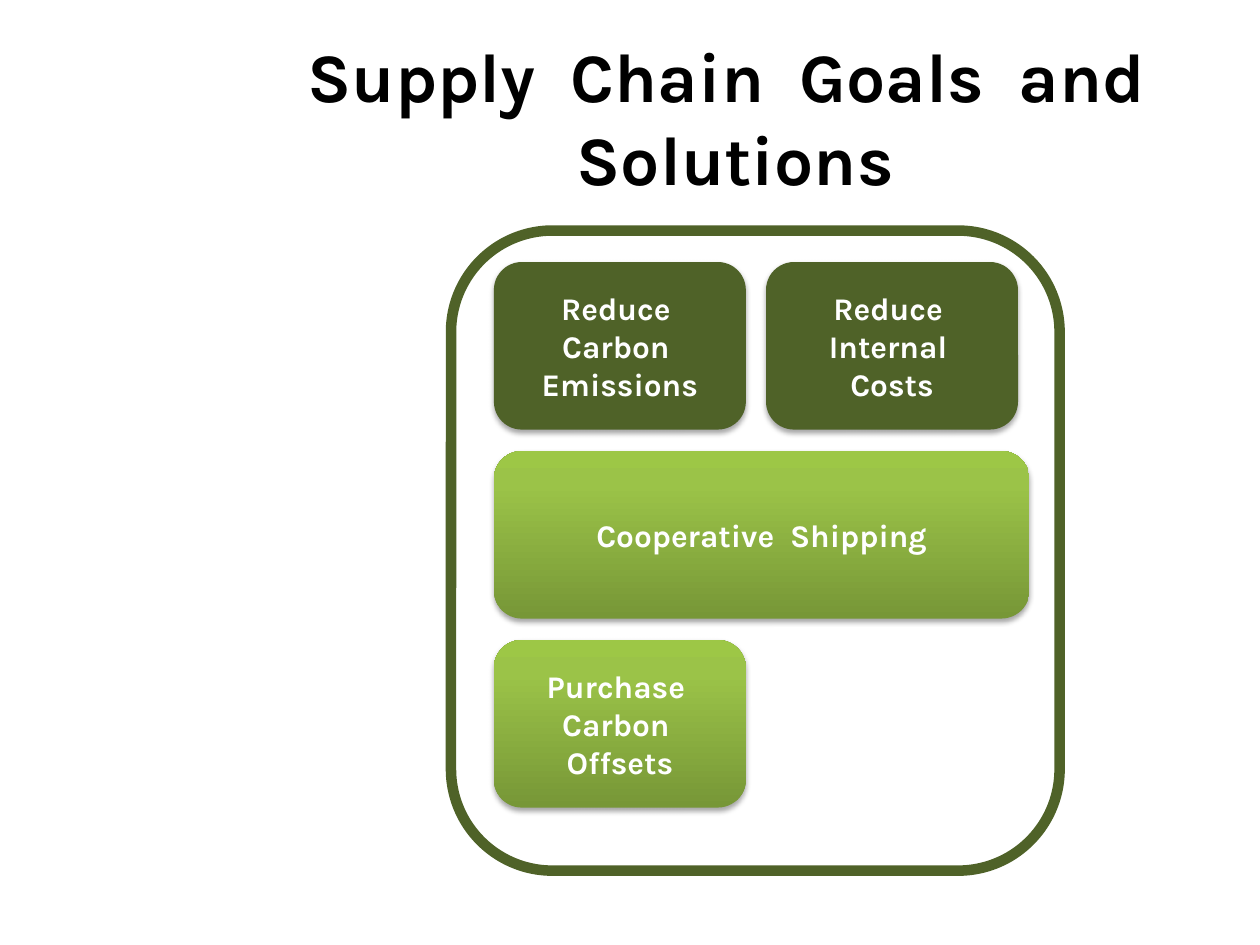
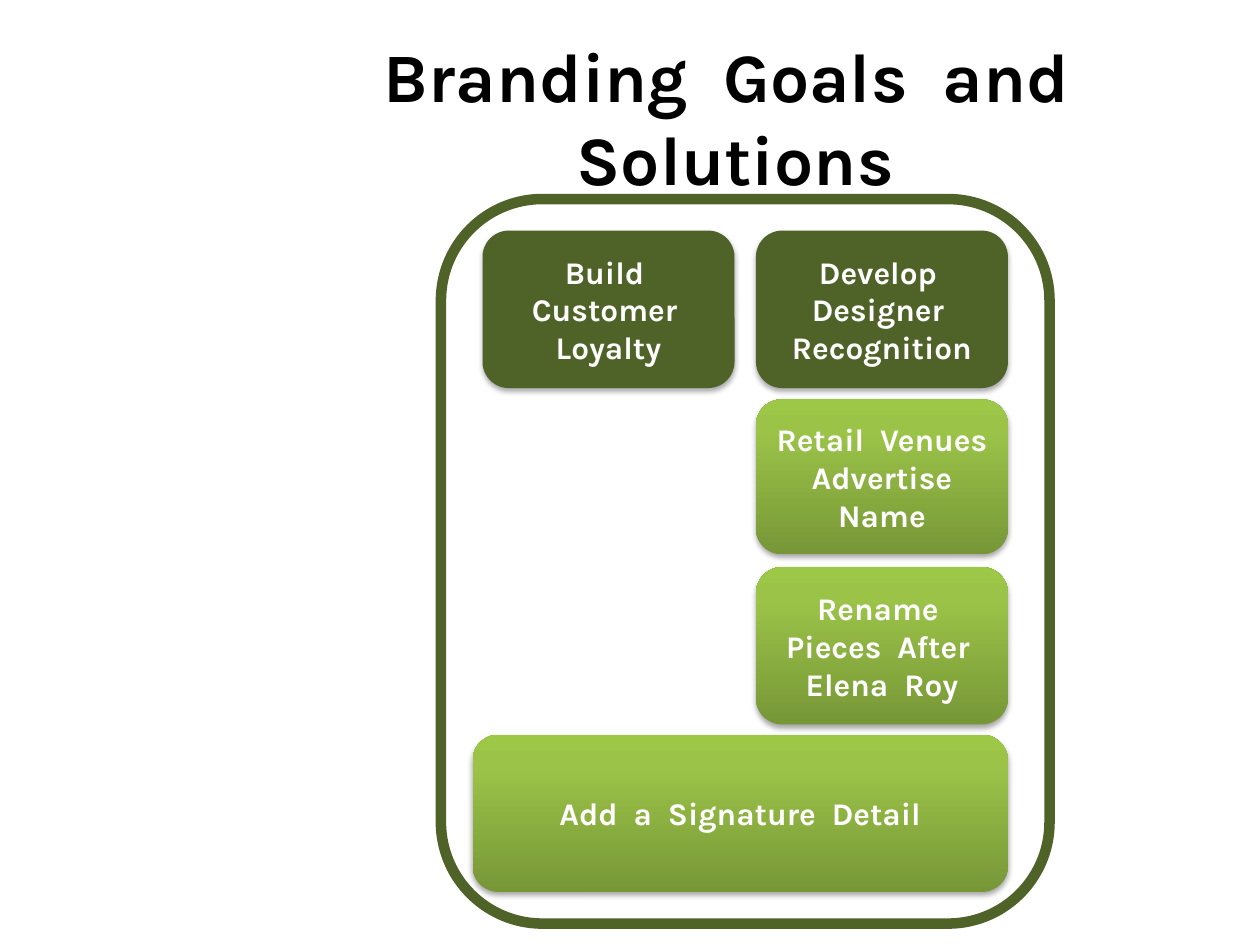
"""Build two slides that pair business goals with their solutions."""
from copy import deepcopy

from lxml import etree
from pptx import Presentation
from pptx.dml.color import RGBColor
from pptx.enum.shapes import MSO_SHAPE
from pptx.enum.text import MSO_ANCHOR, MSO_AUTO_SIZE, PP_ALIGN
from pptx.oxml.ns import qn
from pptx.util import Inches, Pt

ROUNDED = MSO_SHAPE.ROUNDED_RECTANGLE
CENTER = PP_ALIGN.CENTER
MIDDLE = MSO_ANCHOR.MIDDLE
NO_AUTOFIT = MSO_AUTO_SIZE.NONE

FONT = "Karla"
COLORS = {
    "title": "000000",
    "label": "FFFFFF",
    "goal": "4F6228",
    "shade": "779737",
    "leaf": "9BC348",
    "light": "9DC746",
}
SOLUTION_STOPS = [(0, "shade"), (0.8, "leaf"), (1, "light")]
BOX_WIDTH = 2
WIDE_WIDTH = 4.25
FRAME_WIDTH = 4.83

PAGES = [
    {
        "title": "Supply  Chain  Goals  and  Solutions",
        "frame": (3.58, 1.83, 5.08),
        "boxes": [
            ("goal", "Reduce  Carbon  Emissions", 3.92, 2.08, BOX_WIDTH, 1.33),
            ("goal", "Reduce  Internal  Costs", 6.08, 2.08, BOX_WIDTH, 1.33),
            ("solution", "Cooperative  Shipping", 3.92, 3.58, WIDE_WIDTH, 1.33),
            ("solution", "Purchase  Carbon  Offsets", 3.92, 5.08, BOX_WIDTH, 1.33),
        ],
    },
    {
        "title": "Branding  Goals  and  Solutions",
        "frame": (3.5, 1.58, 5.75),
        "boxes": [
            ("goal", "Build  Customer  Loyalty", 3.83, 1.83, BOX_WIDTH, 1.25),
            ("goal", "Develop  Designer  Recognition", 6, 1.83, BOX_WIDTH, 1.25),
            ("solution", "Retail  Venues  Advertise  Name", 6, 3.17, BOX_WIDTH, 1.23),
            ("solution", "Rename  Pieces  After  Elena  Roy", 6, 4.5, BOX_WIDTH, 1.25),
            ("solution", "Add  a  Signature  Detail", 3.75, 5.83, WIDE_WIDTH, 1.25),
        ],
    },
]


def write_text(shape, text, size, color):
    frame = shape.text_frame
    frame.word_wrap = True
    frame.auto_size = NO_AUTOFIT
    frame.vertical_anchor = MIDDLE
    para = frame.paragraphs[0]
    para.alignment = CENTER
    span = para.add_run()
    span.text = text
    span.font.name = FONT
    span.font.size = Pt(size)
    span.font.bold = True
    span.font.color.rgb = RGBColor.from_string(COLORS[color])


def add_soft_shadow(shape):
    effects = shape.element.spPr.find(qn("a:effectLst"))
    shadow = etree.SubElement(effects, qn("a:outerShdw"), blurRad="40000",
                              dist="23000", dir="5400000", rotWithShape="0")
    shadow_color = etree.SubElement(shadow, qn("a:srgbClr"), val="000000")
    etree.SubElement(shadow_color, qn("a:alpha"), val="35000")


deck = Presentation()
deck.slide_width = Inches(10)
deck.slide_height = Inches(7.5)
title_only = deck.slide_layouts[5]

for page in PAGES:
    slide = deck.slides.add_slide(title_only)
    title = slide.shapes.title
    title.left, title.top = Inches(2.17), Inches(0.3)
    title.width, title.height = Inches(7.33), Inches(1.25)
    write_text(title, page["title"], size=39.6, color="title")

    for role, label, left, top, width, height in page["boxes"]:
        box = slide.shapes.add_shape(ROUNDED, Inches(left), Inches(top),
                                     Inches(width), Inches(height))
        if role == "goal":
            box.fill.solid()
            box.fill.fore_color.rgb = RGBColor.from_string(COLORS["goal"])
        else:
            box.fill.gradient()
            box.fill.gradient_angle = 90
            stop_list = box.element.spPr.find(".//" + qn("a:gsLst"))
            stop_list.append(deepcopy(stop_list[-1]))
            for stop, (position, color) in zip(box.fill.gradient_stops, SOLUTION_STOPS):
                stop.position = position
                stop.color.rgb = RGBColor.from_string(COLORS[color])
        box.line.fill.background()
        box.shadow.inherit = False
        add_soft_shadow(box)
        write_text(box, label, size=18, color="label")

    left, top, height = page["frame"]
    border = slide.shapes.add_shape(ROUNDED, Inches(left), Inches(top),
                                    Inches(FRAME_WIDTH), Inches(height))
    border.fill.background()
    border.line.color.rgb = RGBColor.from_string(COLORS["goal"])
    border.line.width = Pt(6)
    border.shadow.inherit = False

deck.save("out.pptx")
